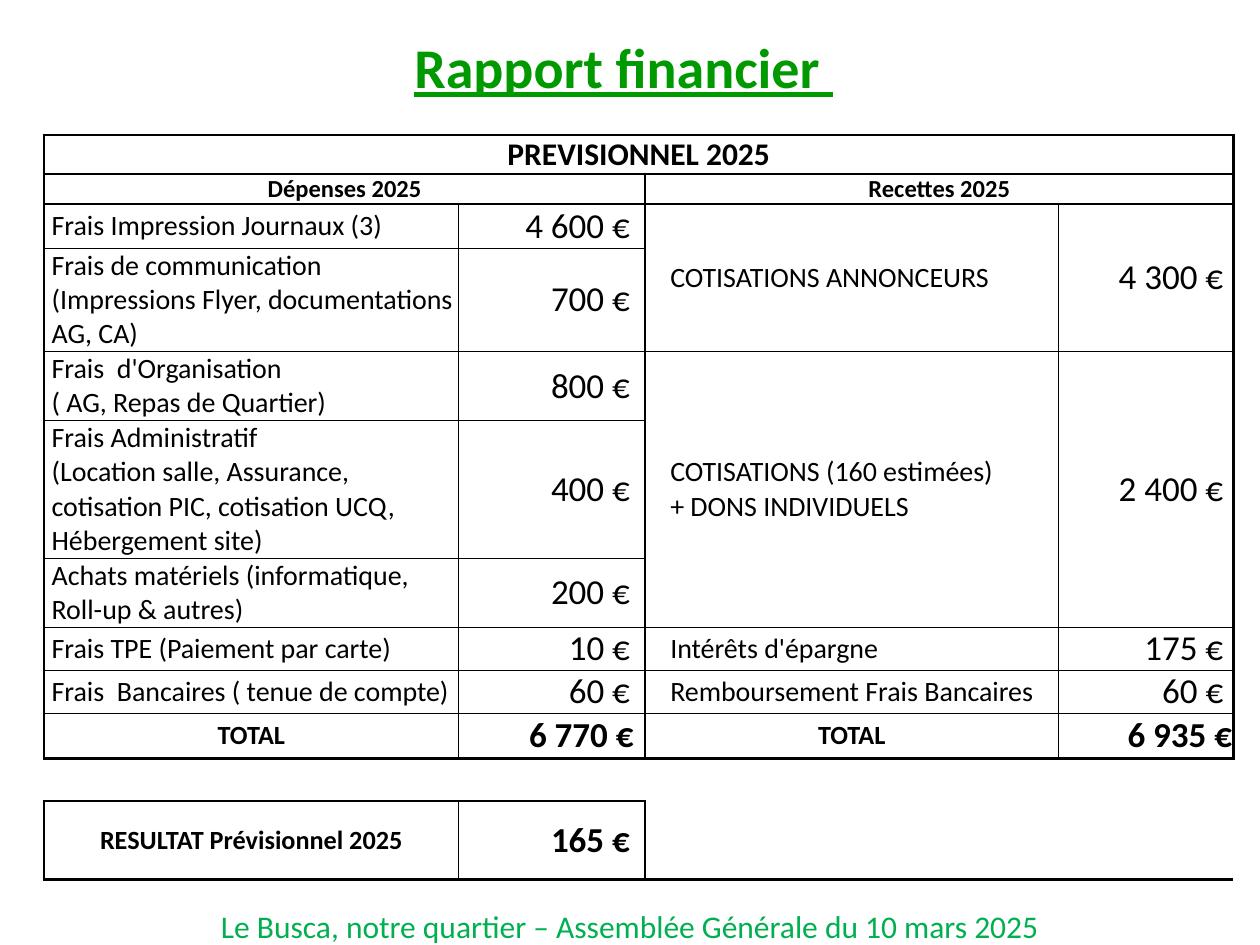
from dataclasses import dataclass

from lxml.etree import SubElement
from pptx import Presentation
from pptx.dml.color import RGBColor
from pptx.enum.text import MSO_ANCHOR as Anchor, MSO_AUTO_SIZE as AutoSize, PP_ALIGN as Align
from pptx.oxml.ns import qn
from pptx.util import Inches, Pt

COLORS = {"title": "009900", "footer": "00B050", "ink": "000000"}
FONT = "Calibri"
NO_STYLE = "{2D5ABB26-0587-4C30-8999-92F81FD0307C}"
COLUMN_WIDTHS = [3.29, 1.48, 3.28, 1.39]
ROW_HEIGHTS = [0.31, 0.24, 0.35, 0.82, 0.55, 1.09, 0.55,
               0.34, 0.34, 0.36, 0.34, 0.31, 0.31, 0.83]
TOTAL_ROW, SPACER_ROW, RESULT_ROW, LAST_ROW = 9, 10, 11, 13
THICK, MEDIUM, THIN = 1.5, 1, 0.5


@dataclass(frozen=True)
class Style:
    size: int
    bold: bool = False
    align: Align = Align.LEFT
    left: float = 0
    right: float = 0


@dataclass(frozen=True)
class Entry:
    row: int
    column: int
    text: str
    style: Style
    rows: int = 1
    columns: int = 1


HEADING = Style(18, True, Align.CENTER)
SUBHEADING = Style(14, True, Align.CENTER)
EXPENSE = Style(16, left=0.06)
EXPENSE_AMOUNT = Style(20, align=Align.RIGHT, right=0.12)
INCOME = Style(16, left=0.2)
INCOME_AMOUNT = Style(20, align=Align.RIGHT, right=0.08)
TOTAL = Style(15, True, Align.CENTER)
EXPENSE_TOTAL = Style(20, True, Align.RIGHT, right=0.09)
INCOME_TOTAL = Style(20, True, Align.RIGHT, right=0.01)
RESULT_AMOUNT = Style(20, True, Align.RIGHT, right=0.12)

# Expenses: label and amount, one row each (\v is a line break)
EXPENSES = [
    ("Frais Impression Journaux (3)", "4 600 €"),
    ("Frais de communication\v(Impressions Flyer, documentations AG, CA)", "700 €"),
    ("Frais  d'Organisation\v( AG, Repas de Quartier)", "800 €"),
    ("Frais Administratif\v(Location salle, Assurance, cotisation PIC, "
     "cotisation UCQ, Hébergement site)", "400 €"),
    ("Achats matériels (informatique, Roll-up & autres)", "200 €"),
    ("Frais TPE (Paiement par carte)", "10 €"),
    ("Frais  Bancaires ( tenue de compte)", "60 €"),
]
# Income: label, amount and number of rows spanned
INCOMES = [
    ("COTISATIONS ANNONCEURS", "4 300 €", 2),
    ("COTISATIONS (160 estimées)\n+ DONS INDIVIDUELS", "2 400 €", 3),
    ("Intérêts d'épargne", "175 €", 1),
    ("Remboursement Frais Bancaires", "60 €", 1),
]


def table_entries() -> list[Entry]:
    entries = [
        Entry(0, 0, "PREVISIONNEL 2025", HEADING, columns=4),
        Entry(1, 0, "Dépenses 2025", SUBHEADING, columns=2),
        Entry(1, 2, "Recettes 2025", SUBHEADING, columns=2),
        Entry(TOTAL_ROW, 0, "TOTAL", TOTAL),
        Entry(TOTAL_ROW, 1, "6 770 €", EXPENSE_TOTAL),
        Entry(TOTAL_ROW, 2, "TOTAL", TOTAL),
        Entry(TOTAL_ROW, 3, "6 935 €", INCOME_TOTAL),
        Entry(RESULT_ROW, 0, "RESULTAT Prévisionnel 2025", TOTAL, rows=2),
        Entry(RESULT_ROW, 1, "165 €", RESULT_AMOUNT, rows=2),
    ]
    for row, (label, amount) in enumerate(EXPENSES, start=2):
        entries += [Entry(row, 0, label, EXPENSE), Entry(row, 1, amount, EXPENSE_AMOUNT)]
    row = 2
    for label, amount, rows in INCOMES:
        entries += [Entry(row, 2, label, INCOME, rows), Entry(row, 3, amount, INCOME_AMOUNT, rows)]
        row += rows
    return entries


def vertical_weight(line: int, row: int) -> float:
    if line in (0, 4) or (line == 2 and not 2 <= row < TOTAL_ROW):
        return THICK
    return MEDIUM


def horizontal_weight(line: int) -> float:
    return THIN if 2 < line <= TOTAL_ROW else THICK


def set_borders(cell, borders: dict[str, float]) -> None:
    properties = cell._tc.get_or_add_tcPr()
    for side in "LRTB":
        weight = borders.get(side)
        line = SubElement(properties, qn(f"a:ln{side}"), w=str(Pt(weight or 0)))
        if weight:
            fill = SubElement(line, qn("a:solidFill"))
            SubElement(fill, qn("a:srgbClr"), val=COLORS["ink"])
        else:
            SubElement(line, qn("a:noFill"))


def format_text(text_frame, size: int, color: str, bold: bool, align: Align,
                underline: bool = False) -> None:
    for paragraph in text_frame.paragraphs:
        paragraph.alignment = align
        for run in paragraph.runs:
            font = run.font
            font.name, font.size, font.bold = FONT, Pt(size), bold
            font.underline = underline
            font.color.rgb = RGBColor.from_string(COLORS[color])


def fill_entry(table, entry: Entry) -> None:
    cell = table.cell(entry.row, entry.column)
    end_row, end_column = entry.row + entry.rows, entry.column + entry.columns
    if entry.rows * entry.columns > 1:
        cell.merge(table.cell(end_row - 1, end_column - 1))
    cell.text = entry.text
    style = entry.style
    cell.margin_left, cell.margin_right = Inches(style.left), Inches(style.right)
    format_text(cell.text_frame, style.size, "ink", style.bold, style.align)


def cell_borders(entries: list[Entry]) -> dict[tuple[int, int], dict[str, float]]:
    # Cells outside the boxes only carry the rules that cross them
    borders = {(SPACER_ROW, column): {"T": THICK} for column in range(4)}
    borders |= {(LAST_ROW, column): {"T": THICK} for column in range(4)}
    borders |= {(LAST_ROW - 1, column): {"B": THICK} for column in (2, 3)}
    for column in (0, 1):
        borders[SPACER_ROW, column]["B"] = THICK
    for row in (RESULT_ROW, RESULT_ROW + 1):
        borders.setdefault((row, 2), {})["L"] = THICK
    # Every cell of a box carries the box outline that touches it;
    # the first cell of a merged box also carries its right edge
    for entry in entries:
        end_row, end_column = entry.row + entry.rows, entry.column + entry.columns
        for row in range(entry.row, end_row):
            for column in range(entry.column, end_column):
                sides = borders.setdefault((row, column), {})
                if column == entry.column:
                    sides["L"] = vertical_weight(column, row)
                if column in (entry.column, end_column - 1):
                    sides["R"] = vertical_weight(end_column, row)
                if row == entry.row:
                    sides["T"] = horizontal_weight(row)
                if row == end_row - 1:
                    sides["B"] = horizontal_weight(end_row)
    return borders


def add_budget_table(slide) -> None:
    frame = slide.shapes.add_table(
        len(ROW_HEIGHTS), len(COLUMN_WIDTHS), Inches(0.35), Inches(1.07),
        Inches(sum(COLUMN_WIDTHS)), Inches(sum(ROW_HEIGHTS)))
    table = frame.table
    table.first_row = table.horz_banding = False
    table._tbl.tblPr.find(qn("a:tableStyleId")).text = NO_STYLE
    for column, width in zip(table.columns, COLUMN_WIDTHS):
        column.width = Inches(width)
    for row, height in zip(table.rows, ROW_HEIGHTS):
        row.height = Inches(height)

    entries = table_entries()
    borders = cell_borders(entries)
    for row in range(len(ROW_HEIGHTS)):
        for column in range(len(COLUMN_WIDTHS)):
            cell = table.cell(row, column)
            cell.margin_left = cell.margin_right = cell.margin_top = cell.margin_bottom = 0
            cell.vertical_anchor = Anchor.MIDDLE
            set_borders(cell, borders.get((row, column), {}))
            cell.fill.background()
    table.cell(LAST_ROW, 0).merge(table.cell(LAST_ROW, 3))
    for entry in entries:
        fill_entry(table, entry)


def main() -> None:
    presentation = Presentation()
    presentation.slide_width, presentation.slide_height = Inches(10), Inches(7.5)
    slide = presentation.slides.add_slide(presentation.slide_layouts[5])

    # Title
    title = slide.shapes.title
    title.left, title.top = Inches(2.45), Inches(0.21)
    title.width, title.height = Inches(5), Inches(0.64)
    title.text_frame.text = "Rapport financier "
    title.text_frame.auto_size = AutoSize.NONE
    title.text_frame.vertical_anchor = Anchor.TOP
    format_text(title.text_frame, 32, "title", True, Align.CENTER, underline=True)

    # Budget table
    add_budget_table(slide)

    # Footer
    footer = slide.shapes.add_textbox(0, Inches(7.2), Inches(10), Inches(0.3))
    footer.text_frame.text = "Le Busca, notre quartier – Assemblée Générale du 10 mars 2025"
    footer.text_frame.word_wrap = True
    footer.text_frame.vertical_anchor = Anchor.MIDDLE
    format_text(footer.text_frame, 18, "footer", False, Align.CENTER)

    presentation.save("out.pptx")


if __name__ == "__main__":
    main()
